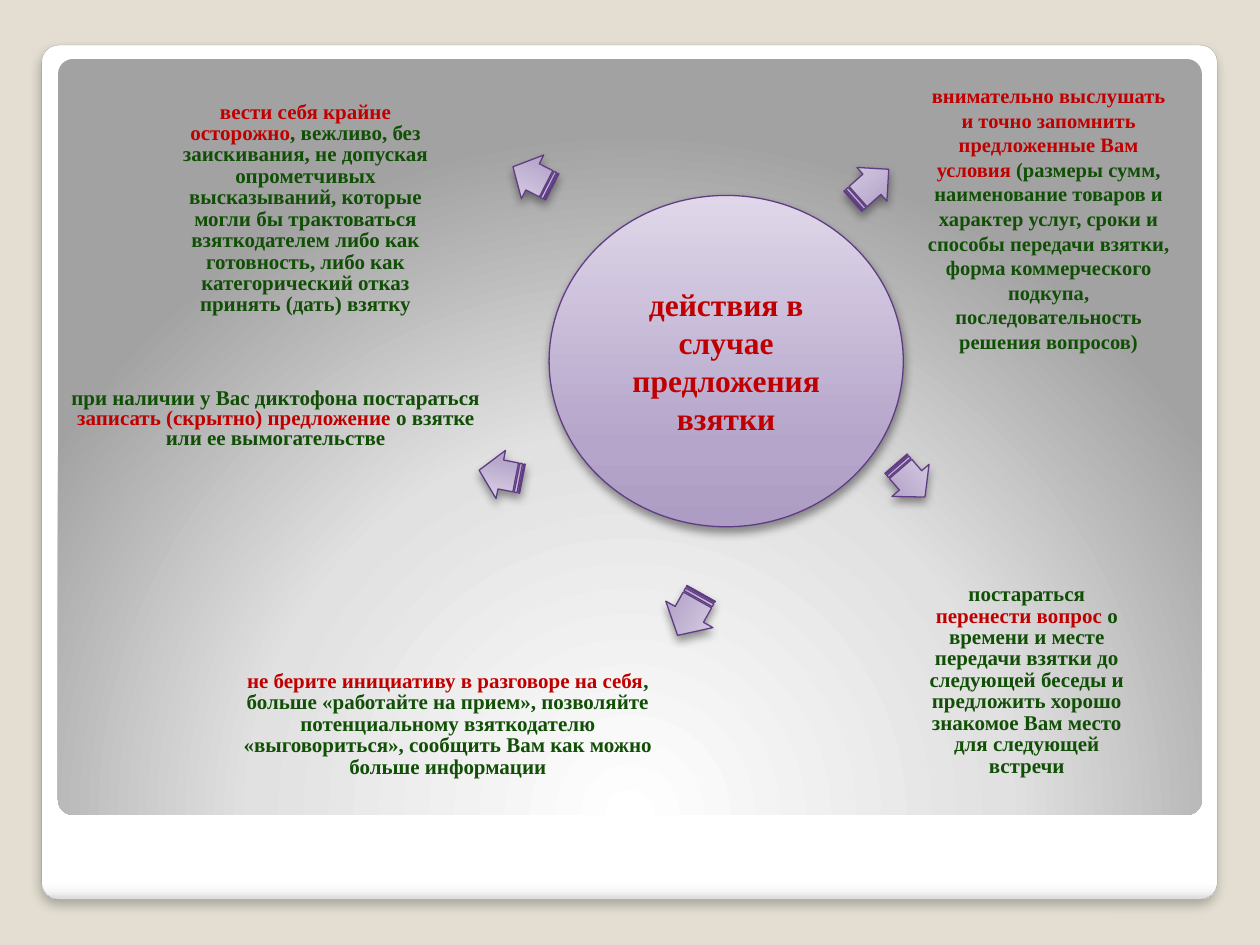
import pptx
import pptx.util
import pptx.dml.color
import pptx.enum.shapes
import pptx.enum.text
import pptx.oxml
import pptx.oxml.ns

Cm, Pt = pptx.util.Cm, pptx.util.Pt
RGB = pptx.dml.color.RGBColor
KIND = pptx.enum.shapes.MSO_SHAPE

SAND = RGB(0xE3, 0xDE, 0xD1)
WHITE = RGB(0xFF, 0xFF, 0xFF)
PALE = RGB(0xF7, 0xF7, 0xF7)
SILVER = RGB(0xE1, 0xE1, 0xE1)
MIST = RGB(0xDA, 0xDA, 0xDA)
GREY = RGB(0xA2, 0xA2, 0xA2)
EDGE = RGB(0xA4, 0xA4, 0xA4)
PLUM = RGB(0xAD, 0x9C, 0xC3)
LILAC = RGB(0xB5, 0xA5, 0xCA)
MAUVE = RGB(0xDF, 0xD7, 0xE9)
PURPLE = RGB(0x60, 0x3C, 0x84)
RED = RGB(0xC0, 0, 0)
GREEN = RGB(0x10, 0x4F, 0x05)

LINEAR = '<a:lin ang="{}" scaled="0"/>'
RADIAL = ('<a:path path="circle"><a:fillToRect l="50000" t="175000" '
          'r="50000" b="-75000"/></a:path>')
CARD = [(0, WHITE), (98, WHITE), (99, PALE), (100, MIST)]
PANEL = [(0, WHITE), (55, SILVER), (100, GREY)]
VIOLET = [(0, PLUM), (25, LILAC), (100, MAUVE)]


def paint(shape, stops, course, line=None, width=0.75, shade=None):
    """Set gradient, outline and shadow; shade is (opacity %, blur pt, offset pt)."""
    shape.shadow.inherit = False
    props = shape.element.spPr
    space = pptx.oxml.ns.nsdecls("a")
    marks = "".join(f'<a:gs pos="{pos * 1000}"><a:srgbClr val="{tone}"/></a:gs>'
                    for pos, tone in stops)
    fill = pptx.oxml.parse_xml(f'<a:gradFill {space} rotWithShape="1">'
                               f'<a:gsLst>{marks}</a:gsLst>{course}</a:gradFill>')
    props.find(pptx.oxml.ns.qn("a:prstGeom")).addnext(fill)
    if line is None:
        shape.line.fill.background()
    else:
        shape.line.color.rgb = line
        shape.line.width = Pt(width)
    if shade:
        alpha, blur, drop = shade
        glow = pptx.oxml.parse_xml(
            f'<a:outerShdw {space} blurRad="{Pt(blur)}" dist="{Pt(drop)}" '
            'dir="5400000" rotWithShape="0"><a:srgbClr val="000000">'
            f'<a:alpha val="{alpha * 1000}"/></a:srgbClr></a:outerShdw>')
        props.find(pptx.oxml.ns.qn("a:effectLst")).append(glow)


def write(shape, runs, size=12, space=None, anchor="TOP"):
    frame = shape.text_frame
    frame.word_wrap = True
    frame.vertical_anchor = pptx.enum.text.MSO_ANCHOR[anchor]
    para = frame.paragraphs[0]
    para.alignment = pptx.enum.text.PP_ALIGN.CENTER
    para.line_spacing = space
    for text, tone in runs:
        run = para.add_run()
        run.text = text
        run.font.name = "Times New Roman"
        run.font.size = Pt(size)
        run.font.bold = True
        run.font.color.rgb = tone


deck = pptx.Presentation()
deck.slide_width, deck.slide_height = Cm(25.4), Cm(19.05)
slide = deck.slides.add_slide(deck.slide_layouts[6])
slide.background.fill.solid()
slide.background.fill.fore_color.rgb = SAND
shapes = slide.shapes

# Card and grey panel behind everything
card = shapes.add_shape(KIND.ROUNDED_RECTANGLE, Cm(0.84), Cm(0.91), Cm(23.7), Cm(17.22))
paint(card, CARD, LINEAR.format(5400000), line=EDGE, width=0.16, shade=(25, 6, 4))
panel = shapes.add_shape(KIND.ROUNDED_RECTANGLE, Cm(1.17), Cm(1.19), Cm(23.06), Cm(15.24))
paint(panel, PANEL, RADIAL)
for plate in (card, panel):
    plate.adjustments[0] = 0.02

# Advice around the circle: box, size, line spacing, runs
advice = [
    ((18.42, 1.55, 5.44, 5.72), 11.7, None, [
        ("внимательно выслушать и точно запомнить предложенные Вам условия ", RED),
        ("(размеры сумм, наименование товаров и характер услуг, сроки и способы "
         "передачи взятки, форма коммерческого подкупа, последовательность "
         "решения вопросов)", GREEN)]),
    ((3.3, 1.93, 5.72, 4.62), 12, 0.85, [
        ("вести себя крайне осторожно", RED),
        (", вежливо, без заискивания, не допуская опрометчивых высказываний, "
         "которые могли бы трактоваться взяткодателем либо как готовность, либо "
         "как категорический отказ принять (дать) взятку", GREEN)]),
    ((1.04, 7.72, 9.04, 1.5), 12, 0.8, [
        ("при наличии у Вас диктофона постараться ", GREEN),
        ("записать (скрытно) предложение ", RED),
        ("о взятке или ее вымогательстве", GREEN)]),
    ((4.6, 13.41, 8.86, 2.44), 12, 0.85, [
        ("не берите инициативу в разговоре на себя", RED),
        (", больше «работайте на прием», позволяйте потенциальному взяткодателю "
         "«выговориться», сообщить Вам как можно больше информации", GREEN)]),
    ((18.34, 11.66, 4.72, 4.19), 12, 0.85, [
        ("постараться ", GREEN),
        ("перенести вопрос ", RED),
        ("о времени и месте передачи взятки до следующей беседы и предложить "
         "хорошо знакомое Вам место для следующей встречи", GREEN)]),
]
for box, size, space, runs in advice:
    note = shapes.add_textbox(*map(Cm, box))
    write(note, runs, size=size, space=space)

# Arrows pointing outwards: left, top, width, height, turn
arrows = [
    (10.29, 3.07, 0.89, 0.99, 207.1),
    (9.65, 9.07, 0.89, 0.99, 191.1),
    (13.41, 11.84, 0.97, 1.09, 119.3),
    (17.07, 3.28, 0.97, 0.91, 318.3),
    (17.91, 9.19, 0.89, 0.99, 49.1),
]
violet = {"stops": VIOLET, "course": LINEAR.format(16200000),
          "line": PURPLE, "shade": (40, 5.2, 3)}
for *box, turn in arrows:
    arrow = shapes.add_shape(KIND.STRIPED_RIGHT_ARROW, *map(Cm, box))
    arrow.rotation = turn
    arrow.adjustments[0] = 0.6
    paint(arrow, **violet)

# Circle in the middle
hub = shapes.add_shape(KIND.FLOWCHART_CONNECTOR, Cm(11.07), Cm(3.94), Cm(7.14), Cm(6.68))
paint(hub, **violet)
write(hub, [("действия в случае предложения взятки", RED)], size=18, anchor="MIDDLE")

deck.save("out.pptx")
